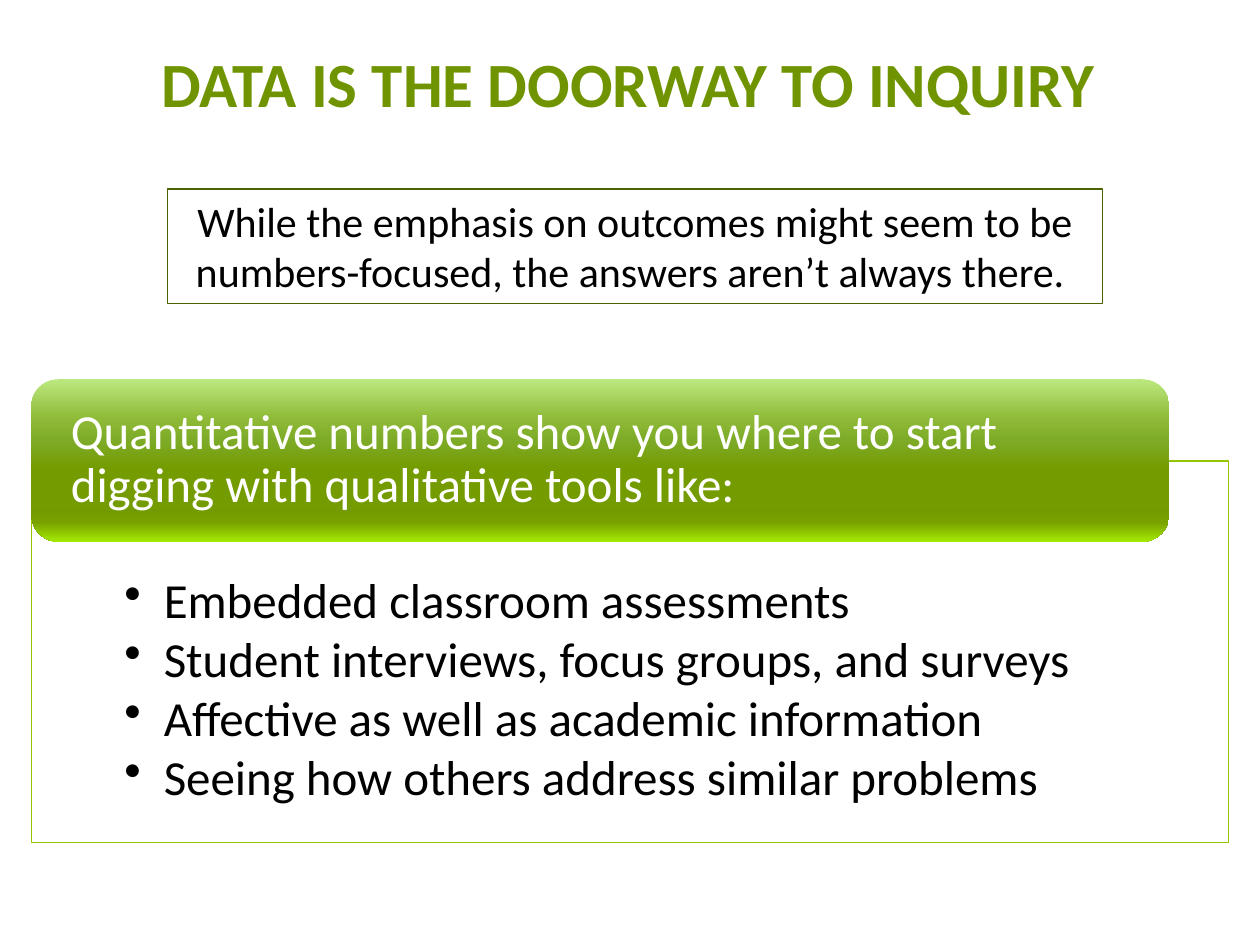
import pptx
import pptx.util
import pptx.dml.color
import pptx.enum.shapes
import pptx.enum.text
import pptx.oxml
import pptx.oxml.ns

Pt = pptx.util.Pt
SHAPES = pptx.enum.shapes.MSO_SHAPE
ALIGN = pptx.enum.text.PP_ALIGN
ANCHOR = pptx.enum.text.MSO_ANCHOR

# Content
TITLE = ["DATA IS THE DOORWAY TO INQUIRY"]
STATEMENT = ["While the emphasis on outcomes might seem to be "
             "numbers-focused, the answers aren’t always there. "]
HEADING = ["Quantitative numbers show you where to start "
           "digging with qualitative tools like:"]
TOOLS = [
    "Embedded classroom assessments",
    "Student interviews, focus groups, and surveys",
    "Affective as well as academic information",
    "Seeing how others address similar problems",
]

THEME = {
    "font": "Calibri",
    "title": "6F9400", "text": "000000", "light": "FFFFFF",
    "panel_line": "94C600", "statement_line": "4A6300",
    "title_size": 36, "statement_size": 24, "body_size": 28,
    "line_width": 0.75,
    "gradient": [(0, "BCE97F"), (25, "8DB936"), (38, "7EAB27"), (55, "749B00"),
                 (80, "739A00"), (88, "79A200"), (100, "A3E900")],
}

# Layout: left, top, width, height
SLIDE_SIZE = (720, 540)
TITLE_BOX = (33.84, 18, 650.16, 57.6)
STATEMENT_BOX = (95.76, 108, 534.24, 65.52)
PANEL_BOX = (18, 263.52, 684, 218.16)
HEADING_BOX = (18, 216.72, 650.16, 92.88)
BULLET_INDENT = 22.5


def color(name):
    return pptx.dml.color.RGBColor.from_string(THEME[name])


def add_box(slide, box, fill=None, line=None, kind=SHAPES.RECTANGLE):
    shape = slide.shapes.add_shape(kind, *map(Pt, box))
    shape.shadow.inherit = False
    if fill:
        shape.fill.solid()
        shape.fill.fore_color.rgb = color(fill)
    else:
        shape.fill.background()
    if line:
        shape.line.color.rgb = color(line)
        shape.line.width = Pt(THEME["line_width"])
    else:
        shape.line.fill.background()
    return shape


def write(shape, lines, size, ink, frame_format, paragraph_format, bold=False):
    frame = shape.text_frame
    for name, value in {"word_wrap": True, **frame_format}.items():
        setattr(frame, name, value)
    frame.text = "\n".join(lines)
    for paragraph in frame.paragraphs:
        for name, value in paragraph_format.items():
            setattr(paragraph, name, value)
        font = paragraph.runs[0].font
        font_format = {"name": THEME["font"], "size": Pt(THEME[size]), "bold": bold}
        for name, value in font_format.items():
            setattr(font, name, value)
        font.color.rgb = color(ink)


def add_bullets(shape):
    for paragraph in shape.text_frame.paragraphs:
        properties = paragraph._p.get_or_add_pPr()
        properties.set("marL", str(Pt(BULLET_INDENT)))
        properties.set("indent", str(-Pt(BULLET_INDENT)))
        bullet = pptx.oxml.parse_xml(
            f'<a:buChar {pptx.oxml.ns.nsdecls("a")} char="•"/>')
        properties.append(bullet)


def fill_gradient(shape):
    stops = "".join(
        f'<a:gs pos="{position * 1000}"><a:srgbClr val="{tint}"/></a:gs>'
        for position, tint in THEME["gradient"])
    gradient = pptx.oxml.parse_xml(
        f'<a:gradFill {pptx.oxml.ns.nsdecls("a")} rotWithShape="1">'
        f'<a:gsLst>{stops}</a:gsLst><a:lin ang="5400000" scaled="0"/></a:gradFill>')
    properties = shape._element.spPr
    properties.replace(properties.find(pptx.oxml.ns.qn("a:noFill")), gradient)


def main():
    presentation = pptx.Presentation()
    presentation.slide_width, presentation.slide_height = map(Pt, SLIDE_SIZE)
    slide = presentation.slides.add_slide(presentation.slide_layouts[6])

    # Title
    title = slide.shapes.add_textbox(*map(Pt, TITLE_BOX))
    write(title, TITLE, "title_size", "title",
          {"vertical_anchor": ANCHOR.MIDDLE}, {"alignment": ALIGN.CENTER}, bold=True)

    # Panel with the list of tools
    panel = add_box(slide, PANEL_BOX, fill="light", line="panel_line")
    write(panel, TOOLS, "body_size", "text",
          {"vertical_anchor": ANCHOR.TOP, "margin_left": Pt(53.1),
           "margin_right": Pt(53.1), "margin_top": Pt(65.6), "margin_bottom": Pt(16)},
          {"alignment": ALIGN.LEFT, "line_spacing": 0.9, "space_after": Pt(3.6)})
    add_bullets(panel)

    # Heading bar over the panel's top edge
    heading = add_box(slide, HEADING_BOX, kind=SHAPES.ROUNDED_RECTANGLE)
    fill_gradient(heading)
    write(heading, HEADING, "body_size", "light",
          {"vertical_anchor": ANCHOR.MIDDLE, "margin_left": Pt(18),
           "margin_right": Pt(18), "margin_top": 0, "margin_bottom": 0},
          {"alignment": ALIGN.LEFT, "line_spacing": 0.9})

    # Framed statement
    statement = add_box(slide, STATEMENT_BOX, line="statement_line")
    write(statement, STATEMENT, "statement_size", "text",
          {"vertical_anchor": ANCHOR.TOP}, {"alignment": ALIGN.CENTER})

    presentation.save("out.pptx")


if __name__ == "__main__":
    main()
